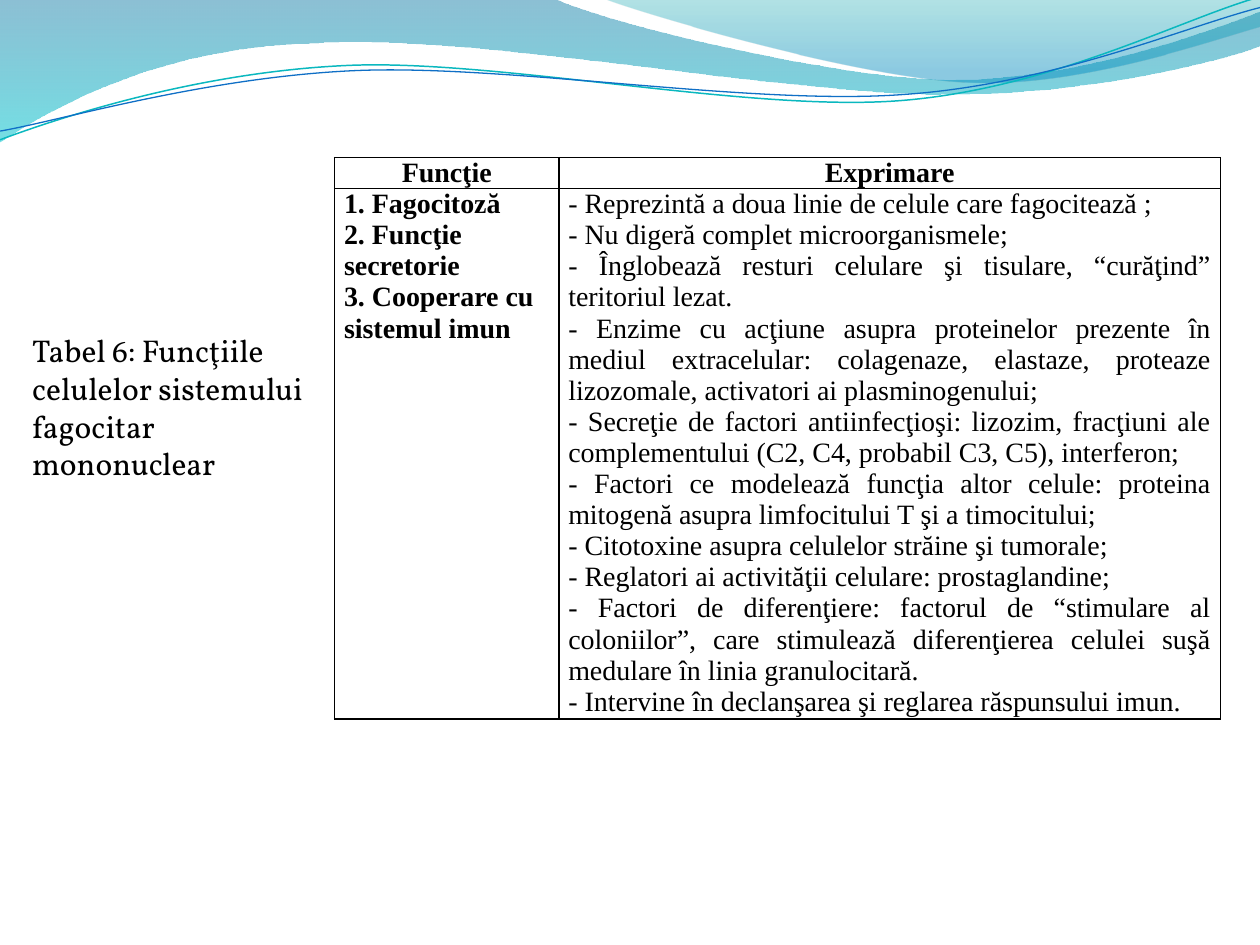
from lxml.etree import SubElement
from pptx import Presentation
from pptx.dml.color import RGBColor
from pptx.enum.text import PP_ALIGN as Align
from pptx.oxml.ns import qn
from pptx.util import Pt

COLORS = {"black": "000000", "deep": "0074A1", "cyan": "00C6CF", "teal": "00A1A9",
          "sky": "008BBF", "aqua": "0AB8BF", "blue": "0F6FC6"}

CAPTION = "Tabel 6: Funcţiile celulelor sistemului fagocitar mononuclear"
HEADERS = ["Funcţie", "Exprimare"]
FUNCTIONS = ["1. Fagocitoză", "2. Funcţie secretorie", "3. Cooperare cu sistemul imun"]
EXPRESSIONS = [
    "- Reprezintă a doua linie de celule care fagocitează ;",
    "- Nu digeră complet microorganismele;",
    "- Înglobează resturi celulare şi tisulare, “curăţind” teritoriul lezat.",
    "- Enzime cu acţiune asupra proteinelor prezente în mediul extracelular: "
    "colagenaze, elastaze, proteaze lizozomale, activatori ai plasminogenului;",
    "- Secreţie de factori antiinfecţioşi: lizozim, fracţiuni ale complementului "
    "(C2, C4, probabil C3, C5), interferon;",
    "- Factori ce modelează funcţia altor celule: proteina mitogenă asupra "
    "limfocitului T şi a timocitului;",
    "- Citotoxine asupra celulelor străine şi tumorale;",
    "- Reglatori ai activităţii celulare: prostaglandine;",
    "- Factori de diferenţiere: factorul de “stimulare al coloniilor”, care "
    "stimulează diferenţierea celulei suşă medulare în linia granulocitară.",
    "- Intervine în declanşarea şi reglarea răspunsului imun.",
]

# Outlines in points: a pair is a straight step, six numbers are a Bezier curve.
# Gradient stops are (position, colour, opacity in percent).
WAVES = [
    ([(0, 0), (316.8, -0.7), (342.7, 12.2, 478.1, 45.4, 545.8, 45.4),
      (614.2, 45.4, 689.8, 18.7, 720, 6.5), (720.7, 25.9),
      (707.8, 31.7, 626.4, 54.7, 537.1, 54), (447.8, 54, 275, 20.2, 185, 24.5),
      (92.9, 25.9, 33.1, 59.8, -0.7, 81.4)],
     [(0, "deep", 45), (1, "cyan", 55)]),
    ([(344.9, -0.7), (366.5, 7.9, 491, 44.6, 553.7, 46.8),
      (616.3, 49.7, 691.9, 23, 720, 15.1), (720, 0)],
     [(0, "teal", 30), (0.8, "sky", 45)]),
]
STRANDS = [
    ([(0, 79.9), (34.6, 67, 113.8, 41, 199.4, 37.4),
      (284.4, 33.8, 427, 64.1, 513.4, 57.6), (599.8, 51.1, 675.4, 10.8, 718.6, -1.4)],
     "aqua", 0.85),
    ([(0, 74.9), (33.8, 69.1, 118.1, 43.9, 203.8, 40.3),
      (290.2, 36.7, 429.8, 60.5, 516.2, 54), (601.9, 48.2, 677.5, 15.1, 720, 4.3)],
     "blue", 0.75),
]


def color(name):
    return RGBColor.from_string(COLORS[name])


def add_outline(page, steps, close):
    """Draw every point as a vertex, then join each curve's three into a Bezier."""
    first, *rest = [(Pt(step[i]), Pt(step[i + 1]))
                    for step in steps for i in range(0, len(step), 2)]
    builder = page.shapes.build_freeform(*first, scale=1.0)
    builder.add_line_segments(rest, close=close)
    shape = builder.convert_to_shape()
    shape.shadow.inherit = False
    segments = iter(list(shape.element.iter(qn("a:lnTo"))))
    for step in steps[1:]:
        segment = next(segments)
        if len(step) == 6:
            segment.tag = qn("a:cubicBezTo")
            for _ in range(2):
                extra = next(segments)
                segment.append(extra[0])
                extra.getparent().remove(extra)
    return shape


def add_wave(page, steps, stops):
    wave = add_outline(page, steps, True)
    wave.line.fill.background()
    wave.fill.gradient()
    wave.fill.gradient_angle = 270
    for stop, (position, name, _) in zip(wave.fill.gradient_stops, stops):
        stop.position = position
        stop.color.rgb = color(name)
    for tint, (_, _, opacity) in zip(wave.element.iter(qn("a:srgbClr")), stops):
        SubElement(tint, qn("a:alpha"), val=str(opacity * 1000))


def add_strand(page, steps, name, width):
    strand = add_outline(page, steps, False)
    strand.fill.background()
    strand.line.color.rgb = color(name)
    strand.line.width = Pt(width)


def write(frame, lines, font, size, bold=False, align=Align.LEFT):
    frame.text = "\n".join(lines)
    for para in frame.paragraphs:
        para.alignment = align
        for span in para.runs:
            span.font.name, span.font.size, span.font.bold = font, Pt(size), bold
            span.font.color.rgb = color("black")


def fill_cell(cell, lines, bold, align):
    cell.margin_left = cell.margin_right = Pt(5.4)
    cell.margin_top = cell.margin_bottom = 0
    properties = cell._tc.get_or_add_tcPr()
    for side in ("lnL", "lnR", "lnT", "lnB"):
        border = SubElement(properties, qn(f"a:{side}"), w=str(Pt(1)))
        SubElement(SubElement(border, qn("a:solidFill")), qn("a:srgbClr"),
                   val=COLORS["black"])
    cell.fill.background()
    write(cell.text_frame, lines, "Times New Roman", 16, bold, align)


def main():
    deck = Presentation()
    deck.slide_width, deck.slide_height = Pt(720), Pt(540)
    page = deck.slides.add_slide(deck.slide_layouts[6])

    # Wavy header
    for wave in WAVES:
        add_wave(page, *wave)
    for strand in STRANDS:
        add_strand(page, *strand)

    # Table of functions
    widths, heights = [128.2, 378], [17.8, 303.2]
    holder = page.shapes.add_table(2, 2, Pt(191.2), Pt(90), Pt(sum(widths)),
                                   Pt(sum(heights)))
    table = holder.table
    for column, width in zip(table.columns, widths):
        column.width = Pt(width)
    for row, height in zip(table.rows, heights):
        row.height = Pt(height)
    holder.height = Pt(345.6)
    for i, header in enumerate(HEADERS):
        fill_cell(table.cell(0, i), [header], True, Align.CENTER)
    table.cell(0, 1).text_frame.paragraphs[0].space_after = Pt(6)
    fill_cell(table.cell(1, 0), FUNCTIONS, True, Align.LEFT)
    fill_cell(table.cell(1, 1), EXPRESSIONS, False, Align.JUSTIFY)

    # Caption
    box = page.shapes.add_textbox(Pt(11.3), Pt(185.6), Pt(180), Pt(94.3))
    box.text_frame.word_wrap = True
    write(box.text_frame, [CAPTION], "Vollkorn", 18)

    deck.save("out.pptx")


if __name__ == "__main__":
    main()
